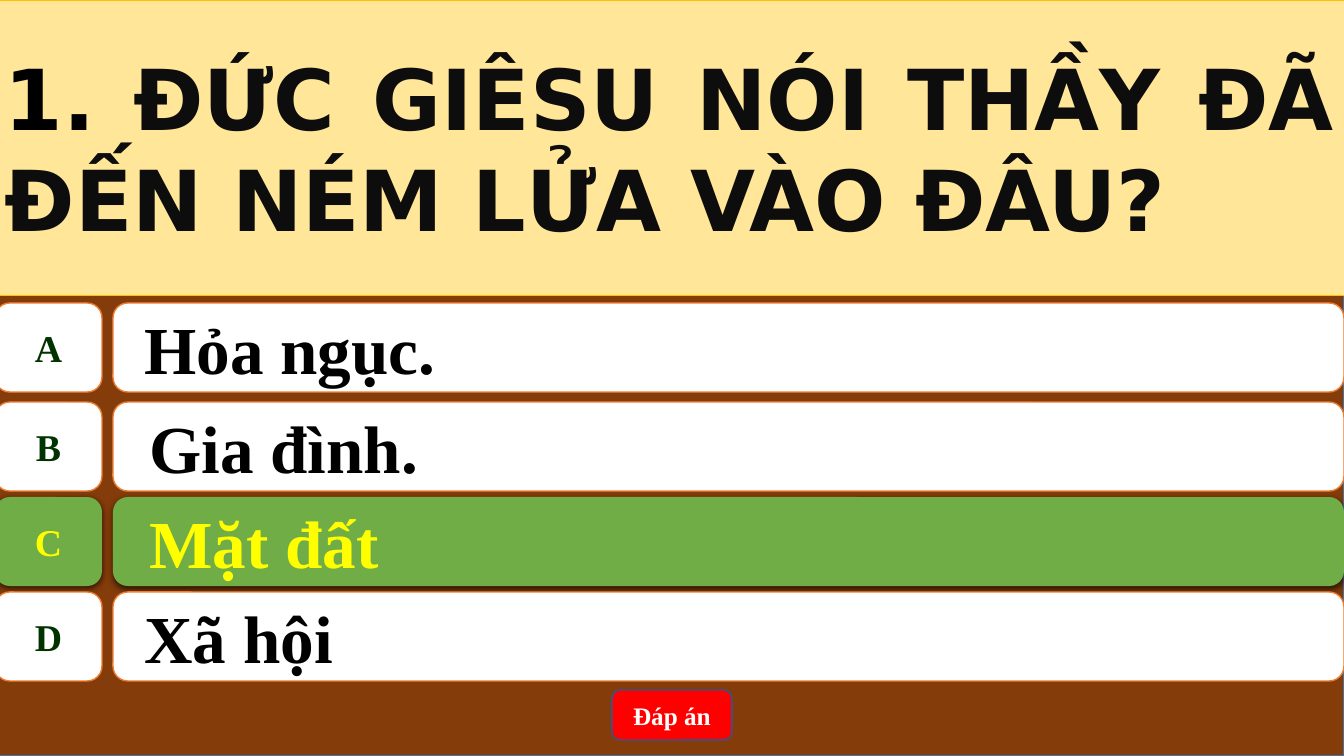
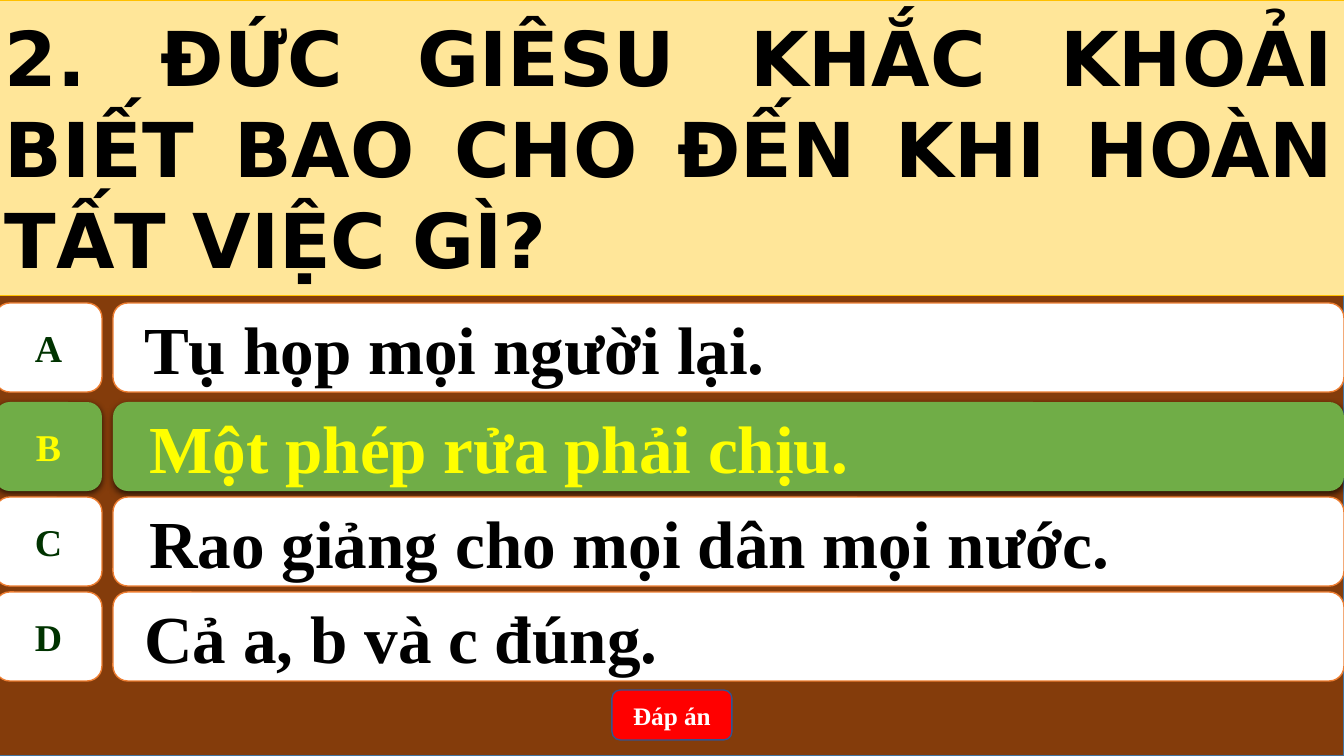
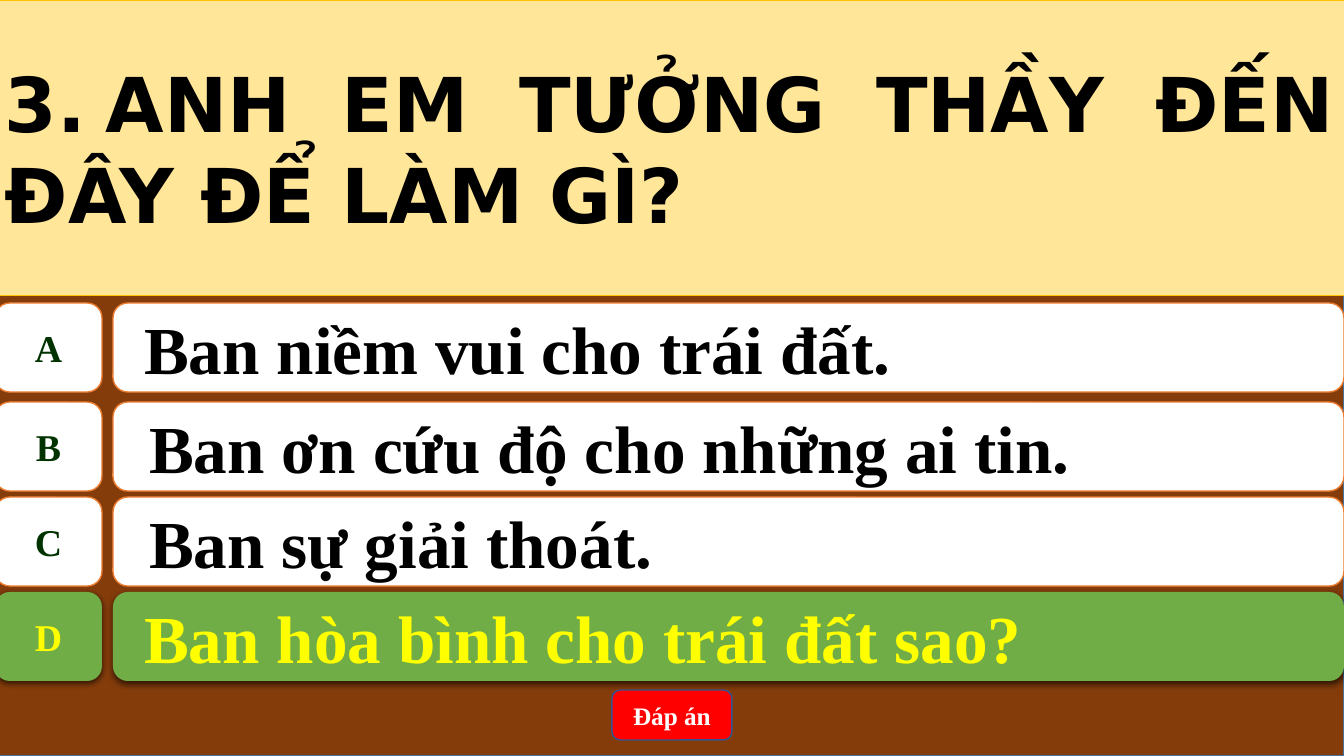
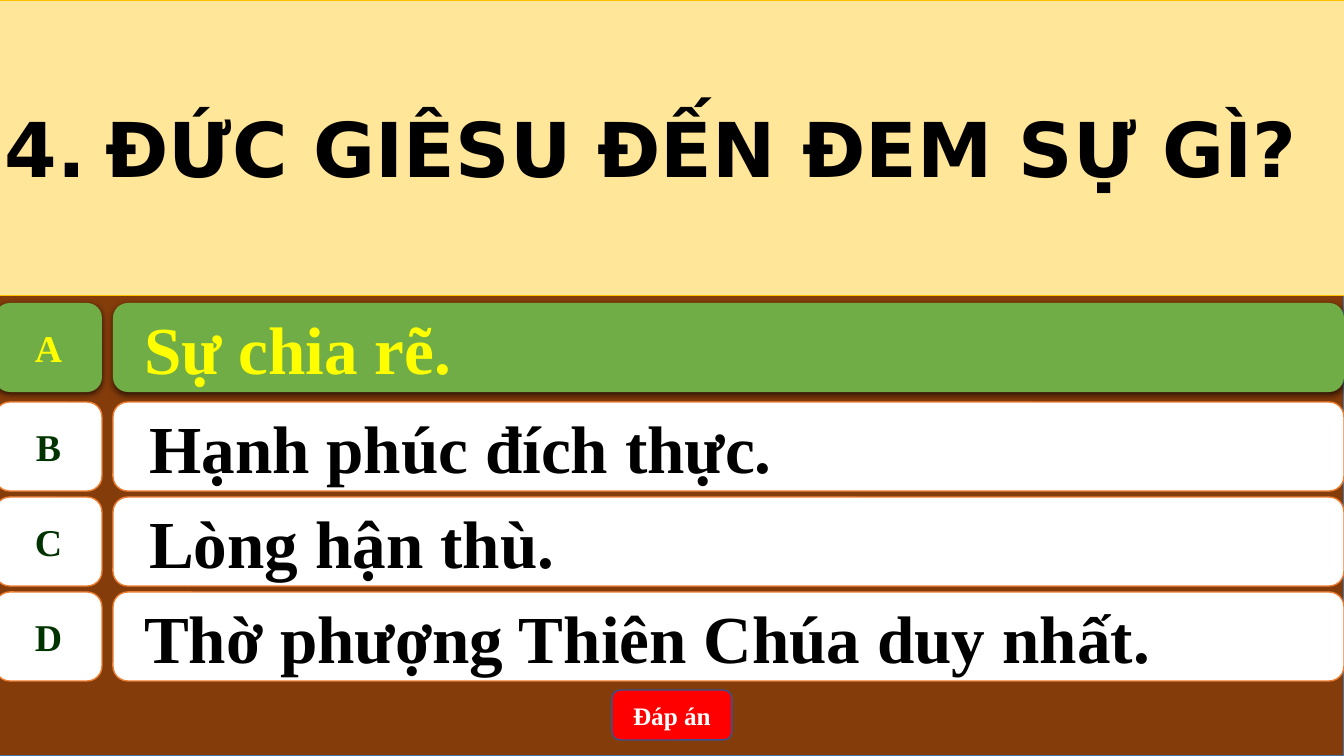
from collections import namedtuple

from lxml import etree
from pptx import Presentation
from pptx.dml.color import RGBColor
from pptx.enum.shapes import MSO_SHAPE as SHAPE
from pptx.enum.text import MSO_ANCHOR as ANCHOR, PP_ALIGN as ALIGN
from pptx.oxml.ns import qn
from pptx.util import Emu, Inches, Pt

# Scale and shared geometry, in px
PX = Inches(1) / 100.8
SLIDE_W, SLIDE_H = 1344, 756
EDGE = -5
FULL_W = SLIDE_W - EDGE
BANNER_H = 295
LABEL_W, ANSWER_X, ANSWER_W, ROW_H = 107, 113, 1231, 89
# Letter, top and text indent of each answer row
ROWS = [("A", 303, 17), ("B", 402, 22), ("C", 497, 22), ("D", 592, 17)]

# Colours
BROWN = RGBColor(0x84, 0x3C, 0x0B)
STEEL = RGBColor(0x43, 0x73, 0x9E)
CREAM = RGBColor(0xFF, 0xE6, 0x99)
GOLD = RGBColor(0xFF, 0xC0, 0x00)
ORANGE = RGBColor(0xED, 0x7D, 0x31)
GREEN = RGBColor(0x70, 0xAD, 0x47)
DARK_GREEN = RGBColor(0x00, 0x33, 0x00)
YELLOW = RGBColor(0xFF, 0xFF, 0x00)
RED = RGBColor(0xFF, 0x00, 0x00)
BLUE = RGBColor(0x32, 0x54, 0x91)
WHITE = RGBColor(0xFF, 0xFF, 0xFF)
BLACK = RGBColor(0x00, 0x00, 0x00)
NEAR_BLACK = RGBColor(0x0D, 0x0D, 0x0D)

SERIF, SANS = "Times New Roman", "DejaVu Sans"

Quiz = namedtuple("Quiz", "number question size ink answers correct")
QUIZZES = [
    Quiz("1. ", "ĐỨC GIÊSU NÓI THẦY ĐÃ ĐẾN NÉM LỬA VÀO ĐÂU?", 60, NEAR_BLACK,
         ["Hỏa ngục.", "Gia đình.", "Mặt đất", "Xã hội"], "C"),
    Quiz("2. ", "ĐỨC GIÊSU KHẮC KHOẢI BIẾT BAO CHO ĐẾN KHI HOÀN TẤT VIỆC GÌ?",
         54, BLACK,
         ["Tụ họp mọi người lại.", "Một phép rửa phải chịu.",
          "Rao giảng cho mọi dân mọi nước.", "Cả a, b và c đúng."], "B"),
    Quiz("3.\t", "ANH EM TƯỞNG THẦY ĐẾN ĐÂY ĐỂ LÀM GÌ?", 54, BLACK,
         ["Ban niềm vui cho trái đất.", "Ban ơn cứu độ cho những ai tin.",
          "Ban sự giải thoát.", "Ban hòa bình cho trái đất sao?"], "D"),
    Quiz("4.\t", "ĐỨC GIÊSU ĐẾN ĐEM SỰ GÌ?", 54, BLACK,
         ["Sự chia rẽ.", "Hạnh phúc đích thực.", "Lòng hận thù.",
          "Thờ phượng Thiên Chúa duy nhất."], "A"),
]


def px(n):
    return Emu(round(n * PX))


def add_box(slide, kind, x, y, w, h, fill, line=None, width=1):
    sp = slide.shapes.add_shape(kind, px(x), px(y), px(w), px(h))
    sp.fill.solid()
    sp.fill.fore_color.rgb = fill
    if line is None:
        sp.line.fill.background()
    else:
        sp.line.color.rgb = line
        sp.line.width = Pt(width)
    sp.shadow.inherit = False
    return sp


def add_text(sp, runs, size, font=SERIF, align=ALIGN.CENTER, wrap=True):
    """Write (text, colour) runs into one bold paragraph."""
    tf = sp.text_frame
    tf.word_wrap = wrap
    tf.vertical_anchor = ANCHOR.MIDDLE
    p = tf.paragraphs[0]
    p.alignment = align
    p.font.size, p.font.name, p.font.bold = Pt(size), font, True
    for text, color in runs:
        r = p.add_run()
        r.text = text
        r.font.color.rgb = color
    return p


def add_glow(sp):
    """Soft black shadow straight below the shape."""
    effects = sp.element.spPr.find(qn("a:effectLst"))
    shadow = etree.SubElement(effects, qn("a:outerShdw"), blurRad=str(Pt(4.5)),
                              dist=str(Pt(1.5)), dir="5400000", algn="ctr",
                              rotWithShape="0")
    color = etree.SubElement(shadow, qn("a:srgbClr"), val="000000")
    etree.SubElement(color, qn("a:alpha"), val="63000")


def add_answer(slide, letter, top, indent, text, correct):
    fill, line = (GREEN, None) if correct else (WHITE, ORANGE)
    answer = add_box(slide, SHAPE.ROUNDED_RECTANGLE, ANSWER_X, top,
                     ANSWER_W, ROW_H, fill, line)
    p = add_text(answer, [(text, YELLOW if correct else BLACK)], 48,
                 align=ALIGN.LEFT)
    p._p.get_or_add_pPr().set("marL", str(px(indent)))

    label = add_box(slide, SHAPE.FLOWCHART_ALTERNATE_PROCESS, EDGE, top,
                    LABEL_W, ROW_H, fill, line)
    add_text(label, [(letter, YELLOW if correct else DARK_GREEN)], 27,
             wrap=False)
    if correct:
        add_glow(answer)
        add_glow(label)


def add_quiz(prs, quiz):
    slide = prs.slides.add_slide(prs.slide_layouts[6])
    # Backdrop and question banner
    add_box(slide, SHAPE.RECTANGLE, EDGE, 0, FULL_W, SLIDE_H, BROWN, STEEL)
    banner = add_box(slide, SHAPE.RECTANGLE, EDGE, 0, FULL_W, BANNER_H,
                     CREAM, GOLD, 0.5)
    add_text(banner, [(quiz.number, BLACK), (quiz.question, quiz.ink)],
             quiz.size, SANS, ALIGN.JUSTIFY)
    # Answers
    for (letter, top, indent), text in zip(ROWS, quiz.answers):
        add_answer(slide, letter, top, indent, text, letter == quiz.correct)
    # Answer button
    button = add_box(slide, SHAPE.ROUNDED_RECTANGLE, 612, 690, 120, 50,
                     RED, BLUE)
    add_text(button, [("Đáp án", WHITE)], 18)


def main():
    prs = Presentation()
    prs.slide_width, prs.slide_height = px(SLIDE_W), px(SLIDE_H)
    for quiz in QUIZZES:
        add_quiz(prs, quiz)
    prs.save("out.pptx")


if __name__ == "__main__":
    main()
